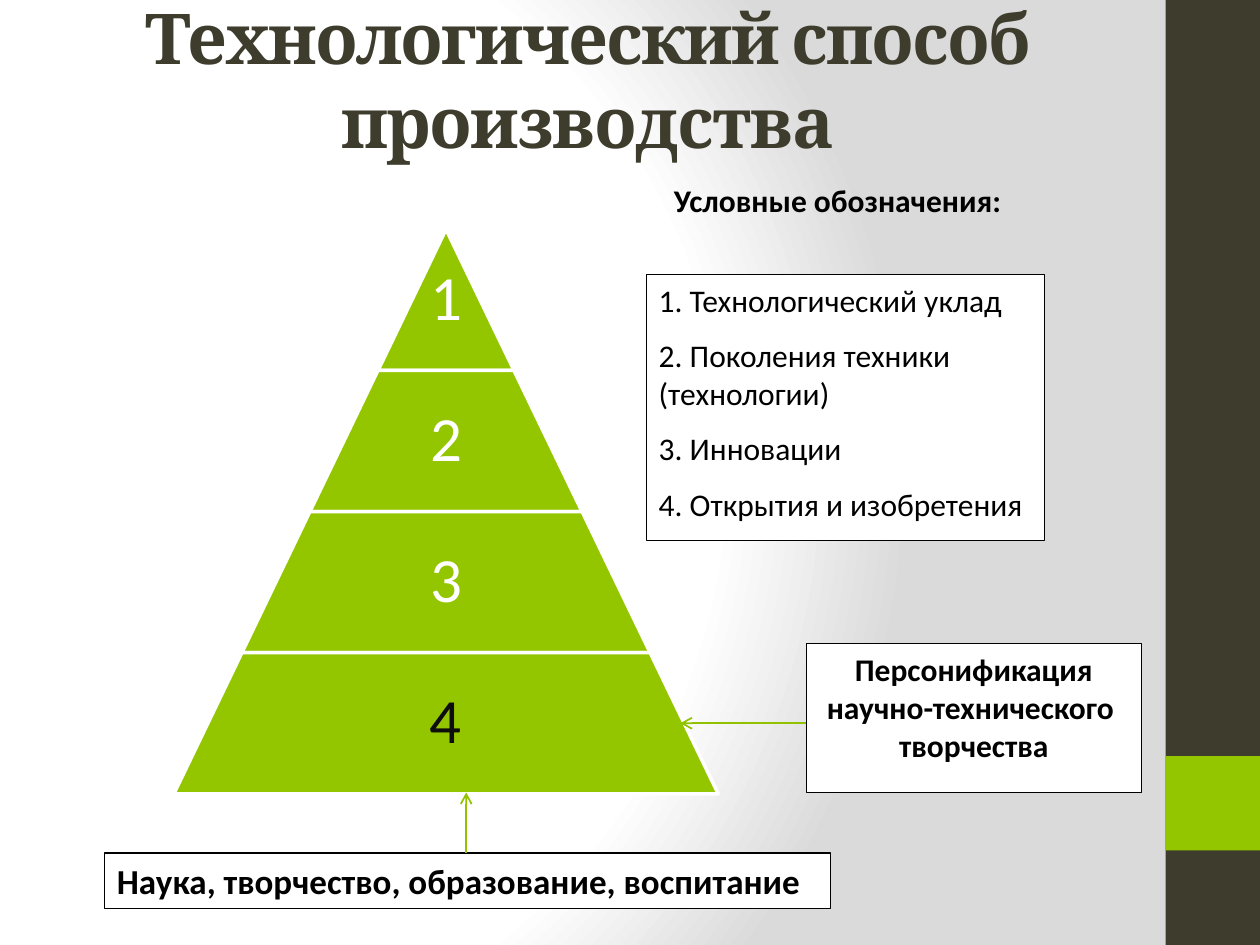
from lxml.etree import SubElement
from pptx import Presentation
from pptx.dml.color import RGBColor
from pptx.enum.shapes import MSO_CONNECTOR, MSO_SHAPE
from pptx.enum.text import MSO_ANCHOR, MSO_AUTO_SIZE, PP_ALIGN
from pptx.oxml import parse_xml
from pptx.oxml.ns import nsdecls, qn
from pptx.util import Inches, Pt

GREEN, DARK, WHITE, BLACK = "94C600", "3E3D2D", "FFFFFF", "000000"
ARROW_GREEN = "91C200"


def color(value):
    return RGBColor.from_string(value)


def apply_format(target, values):
    for name, value in values.items():
        setattr(target, name, value)


class SlideBuilder:
    def __init__(self, slide):
        self.slide = slide
        self.font = "Calibri"

    def background(self, stops):
        """Radial gradient; stops are (percent, colour) pairs."""
        fill = self.slide.background.fill
        fill.solid()
        stop_xml = "".join(
            f'<a:gs pos="{pos * 1000}"><a:srgbClr val="{value}"/></a:gs>'
            for pos, value in stops)
        gradient = parse_xml(
            f'<a:gradFill rotWithShape="1" {nsdecls("a")}>'
            f'<a:gsLst>{stop_xml}</a:gsLst><a:path path="circle">'
            '<a:fillToRect l="20000" t="50000" r="100000" b="50000"/>'
            '</a:path></a:gradFill>')
        properties = self.slide.background._cSld.bg.bgPr
        properties.replace(properties.find(qn("a:solidFill")), gradient)

    def shape(self, box, fill, line=None, weight=0.75, kind=MSO_SHAPE.RECTANGLE):
        shape = self.slide.shapes.add_shape(kind, *map(Inches, box))
        shape.shadow.inherit = False
        shape.fill.solid()
        shape.fill.fore_color.rgb = color(fill)
        if line:
            shape.line.color.rgb = color(line)
            shape.line.width = Pt(weight)
        else:
            shape.line.fill.background()
        return shape

    def put_text(self, shape, lines, size, ink=BLACK, bold=False, font=None,
                 spacing=None, frame=None, paragraph=None):
        """Fill a shape with one paragraph per line."""
        text = shape.text_frame
        apply_format(text, {"word_wrap": True,
                            "vertical_anchor": MSO_ANCHOR.TOP, **(frame or {})})
        for index, line in enumerate(lines):
            para = text.paragraphs[0] if index == 0 else text.add_paragraph()
            apply_format(para, {"alignment": PP_ALIGN.LEFT, **(paragraph or {})})
            run = para.add_run()
            run.text = line
            apply_format(run.font, {"name": font or self.font,
                                    "size": Pt(size), "bold": bold})
            run.font.color.rgb = color(ink)
            if spacing:
                run._r.get_or_add_rPr().set("spc", str(spacing * 100))

    def text(self, box, lines, size, **style):
        self.put_text(self.slide.shapes.add_textbox(*map(Inches, box)),
                      lines, size, **style)

    def panel(self, box, lines, size, **style):
        self.put_text(self.shape(box, WHITE, BLACK), lines, size, **style)

    def arrow(self, start, end):
        connector = self.slide.shapes.add_connector(
            MSO_CONNECTOR.STRAIGHT, *map(Inches, start + end))
        connector.line.color.rgb = color(ARROW_GREEN)
        connector.line.width = Pt(1)
        SubElement(connector.line._get_or_add_ln(), qn("a:tailEnd"), type="arrow")
        SubElement(connector._element.spPr, qn("a:effectLst"))

    def pyramid(self, center, top, step, level_height, inks):
        """Stack trapezoids, each wider than the one above by step."""
        inset = Inches(0.05)
        frame = {"vertical_anchor": MSO_ANCHOR.MIDDLE,
                 "margin_left": inset, "margin_right": inset,
                 "margin_top": inset, "margin_bottom": inset}
        for level, ink in enumerate(inks, 1):
            width = step * level
            y = top + level_height * (level - 1)
            tier = self.shape((center - width / 2, y, width, level_height),
                              GREEN, WHITE, 2, MSO_SHAPE.TRAPEZOID)
            tier.adjustments[0] = step / 2 / min(width, level_height)
            label = max(step, width * 0.65)
            self.text((center - label / 2, y, label, level_height), [str(level)],
                      36, ink=ink, frame=frame,
                      paragraph={"alignment": PP_ALIGN.CENTER, "line_spacing": 0.9})


def main():
    presentation = Presentation()
    apply_format(presentation, {"slide_width": Inches(10),
                                "slide_height": Inches(7.5)})
    builder = SlideBuilder(
        presentation.slides.add_slide(presentation.slide_layouts[6]))
    centered = {"alignment": PP_ALIGN.CENTER}
    spaced = {"space_after": Pt(10)}

    builder.background([(0, WHITE), (75, WHITE), (100, "DADADA")])
    builder.shape((9.25, 0, 0.75, 7.5), DARK)
    builder.shape((9.25, 6, 0.75, 0.75), GREEN)

    builder.pyramid(3.54, 1.82, 1.08, 1.12, [WHITE, WHITE, WHITE, "0D0D0D"])

    builder.panel((5.13, 2.18, 3.16, 2.11),
                  ["1. Технологический уклад",
                   "2. Поколения техники (технологии)",
                   "3. Инновации",
                   "4. Открытия и изобретения"], 18, paragraph=spaced)
    builder.panel((6.4, 5.11, 2.66, 1.18),
                  ["Персонификация", "научно-технического ", "творчества"],
                  18, bold=True, paragraph=centered)
    builder.panel((0.83, 6.77, 5.76, 0.44),
                  ["Наука, творчество, образование, воспитание"],
                  20, bold=True, paragraph=spaced)

    builder.text((0.5, 0, 8.33, 1.25), ["Технологический способ производства"],
                 40, ink=DARK, bold=True, font="Cambria", spacing=-1,
                 frame={"vertical_anchor": MSO_ANCHOR.MIDDLE}, paragraph=centered)
    builder.text((5.25, 1.39, 2.83, 0.71), ["Условные обозначения:"], 18, bold=True,
                 frame={"word_wrap": False,
                        "auto_size": MSO_AUTO_SIZE.SHAPE_TO_FIT_TEXT})

    builder.arrow((3.7, 6.77), (3.7, 6.29))
    builder.arrow((6.4, 5.74), (5.4, 5.74))
    presentation.save("out.pptx")


if __name__ == "__main__":
    main()
